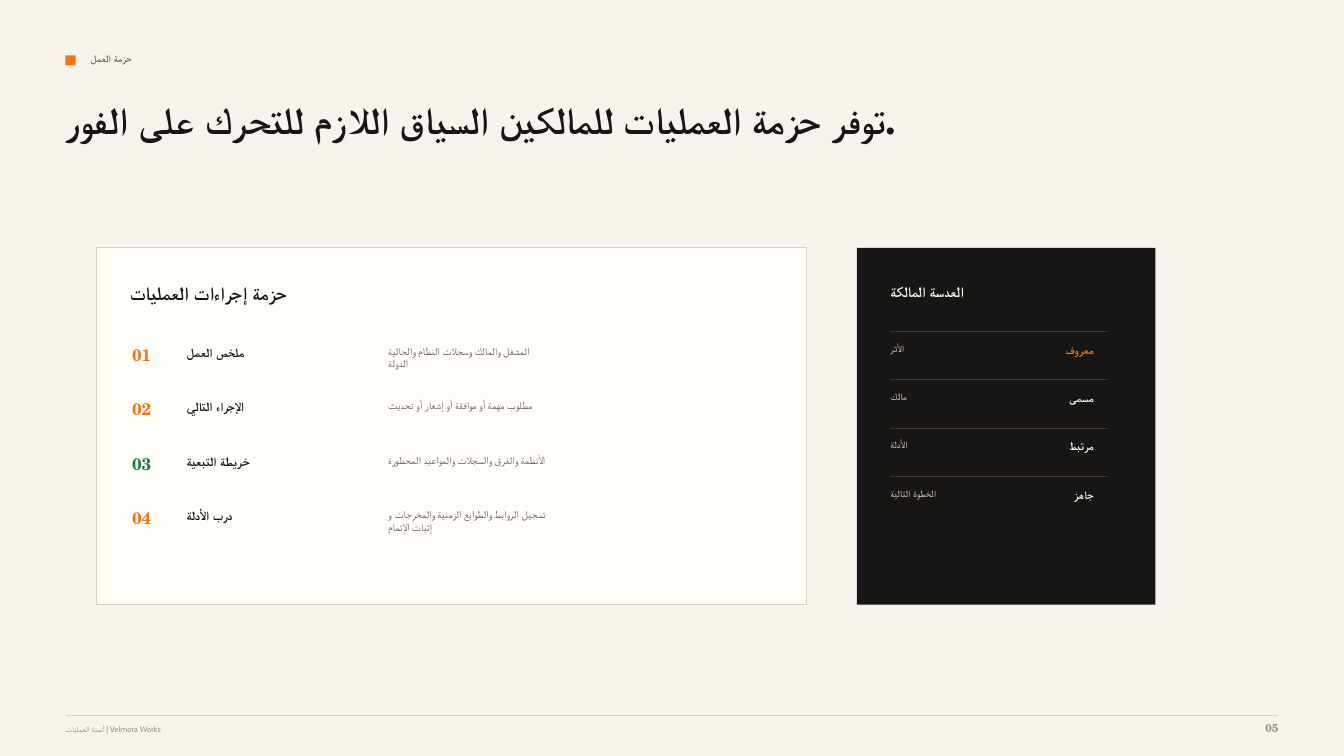
"""Build the work packet slide: a numbered actions card beside a dark owner lens."""
from dataclasses import dataclass

from lxml import etree
from pptx import Presentation
from pptx.dml.color import RGBColor
from pptx.enum.shapes import MSO_CONNECTOR, MSO_SHAPE
from pptx.enum.text import PP_ALIGN
from pptx.oxml.ns import qn
from pptx.util import Inches, Pt

RECTANGLE = MSO_SHAPE.RECTANGLE
STRAIGHT = MSO_CONNECTOR.STRAIGHT
LEFT, RIGHT = PP_ALIGN.LEFT, PP_ALIGN.RIGHT

SECTION = "حزمة العمل"
TITLE = "توفر حزمة العمليات للمالكين السياق اللازم للتحرك على الفور."
ACTIONS_TITLE = "حزمة إجراءات العمليات"
ACTIONS = [
    ("ملخص العمل", ["المشغل والمالك وسجلات النظام والحالية", "الدولة"], "orange"),
    ("الإجراء التالي", ["مطلوب مهمة أو موافقة أو إشعار أو تحديث"], "orange"),
    ("خريطة التبعية", ["الأنظمة والفرق والسجلات والمواعيد المحظورة"], "green"),
    ("درب الأدلة", ["تسجيل الروابط والطوابع الزمنية والمخرجات و", "إثبات الإتمام"], "orange"),
]
LENS_TITLE = "العدسة المالكة"
LENS = [
    ("الأثر", "معروف", "orange"),
    ("مالك", "مسمى", "paper"),
    ("الأدلة", "مرتبط", "paper"),
    ("الخطوة التالية", "جاهز", "paper"),
]
FOOTER = "أتمتة العمليات | Velmora Works"
PAGE = "05"


@dataclass(frozen=True)
class Style:
    size: float
    color: str
    bold: bool = True
    font: str = "Cabin"
    align: int = LEFT


class Theme:
    """Colours and text styles of the slide."""
    serif = "TeX Gyre Schola"
    colors = {
        "paper": "F7F4EE", "card": "FFFDF8", "ink": "171614", "orange": "F97316",
        "green": "15803D", "muted": "69635A", "border": "D9D0C3",
        "lens_rule": "3C362E", "lens_label": "AFA79B", "footer": "9A9184",
    }
    section = Style(7.1, "muted")
    title = Style(27, "ink", font=serif)
    card_title = Style(13.5, "ink")
    action = Style(9, "ink")
    detail = Style(7.5, "muted", bold=False)
    lens_title = Style(10.5, "paper")
    lens_label = Style(6.8, "lens_label")
    footer = Style(5.6, "footer", bold=False)
    page = Style(8.2, "footer", font=serif, align=RIGHT)

    @classmethod
    def number(cls, color):
        return Style(12, color, font=cls.serif)

    @classmethod
    def lens_value(cls, color):
        return Style(8.2, color, align=RIGHT)


WIDTH, HEIGHT = 13.33, 7.5
MARGIN = 0.65
CONTENT_WIDTH = WIDTH - 2 * MARGIN
PANEL_TOP, PANEL_HEIGHT = 2.46, 3.54
CARD_LEFT, CARD_WIDTH = 0.96, 7.04
LENS_LEFT, LENS_WIDTH = 8.5, 2.96
PANEL_PADDING = 0.33
ACTION_TOP, ACTION_PITCH = 3.42, 0.54
NUMBER_LEFT, ACTION_LEFT, DETAIL_LEFT = 1.31, 1.85, 3.85
LENS_TOP, LENS_PITCH, LENS_RULE_WIDTH = 3.29, 0.48, 2.15
FOOTER_TOP = 7.1


def color(name):
    return RGBColor.from_string(Theme.colors[name])


def add_box(slide, left, top, width, height, fill, border=None):
    shape = slide.shapes.add_shape(
        RECTANGLE, Inches(left), Inches(top), Inches(width), Inches(height))
    shape.shadow.inherit = False
    shape.fill.solid()
    shape.fill.fore_color.rgb = color(fill)
    if border:
        shape.line.color.rgb = color(border)
        shape.line.width = Pt(0.75)
    else:
        shape.line.fill.background()


def add_rule(slide, left, top, width, line_color):
    rule = slide.shapes.add_connector(
        STRAIGHT, Inches(left), Inches(top), Inches(left + width), Inches(top))
    rule.line.color.rgb = color(line_color)
    rule.line.width = Pt(0.75)
    etree.SubElement(rule._element.spPr, qn("a:effectLst"))


def add_text(slide, left, top, width, height, lines, style):
    box = slide.shapes.add_textbox(
        Inches(left), Inches(top), Inches(width), Inches(height))
    frame = box.text_frame
    frame.word_wrap = True
    frame.margin_left = frame.margin_right = frame.margin_top = frame.margin_bottom = 0
    frame.text = "\n".join(lines)
    for paragraph in frame.paragraphs:
        paragraph.alignment = style.align
        paragraph.font.name = style.font
        paragraph.font.size = Pt(style.size)
        paragraph.font.bold = style.bold
        paragraph.font.color.rgb = color(style.color)


def add_header(slide):
    add_box(slide, MARGIN, 0.55, 0.1, 0.1, "orange")
    add_text(slide, MARGIN + 0.25, 0.52, 6.46, 0.19, [SECTION], Theme.section)
    add_text(slide, MARGIN, 0.96, 9.38, 1.02, [TITLE], Theme.title)


def add_actions(slide):
    add_box(slide, CARD_LEFT, PANEL_TOP, CARD_WIDTH, PANEL_HEIGHT, "card", "border")
    add_text(slide, CARD_LEFT + PANEL_PADDING, PANEL_TOP + PANEL_PADDING, 3.12, 0.25,
             [ACTIONS_TITLE], Theme.card_title)
    for index, (action, details, accent) in enumerate(ACTIONS):
        top = ACTION_TOP + index * ACTION_PITCH
        add_text(slide, NUMBER_LEFT, top, 0.35, 0.25, [f"{index + 1:02d}"],
                 Theme.number(accent))
        add_text(slide, ACTION_LEFT, top, 1.81, 0.19, [action], Theme.action)
        add_text(slide, DETAIL_LEFT, top, 3.33, 0.31, details, Theme.detail)


def add_lens(slide):
    left = LENS_LEFT + PANEL_PADDING
    add_box(slide, LENS_LEFT, PANEL_TOP, LENS_WIDTH, PANEL_HEIGHT, "ink")
    add_text(slide, left, PANEL_TOP + 0.35, 1.67, 0.21, [LENS_TITLE], Theme.lens_title)
    for index, (label, value, accent) in enumerate(LENS):
        top = LENS_TOP + index * LENS_PITCH
        add_rule(slide, left, top, LENS_RULE_WIDTH, "lens_rule")
        add_text(slide, left, top + 0.11, 0.96, 0.17, [label], Theme.lens_label)
        add_text(slide, left + 1.17, top + 0.11, 0.85, 0.17, [value],
                 Theme.lens_value(accent))


def add_footer(slide):
    add_rule(slide, MARGIN, FOOTER_TOP, CONTENT_WIDTH, "border")
    add_text(slide, MARGIN, FOOTER_TOP + 0.09, 7.92, 0.15, [FOOTER], Theme.footer)
    add_text(slide, WIDTH - MARGIN - 0.5, FOOTER_TOP + 0.05, 0.5, 0.19, [PAGE], Theme.page)


def main():
    presentation = Presentation()
    presentation.slide_width = Inches(WIDTH)
    presentation.slide_height = Inches(HEIGHT)
    slide = presentation.slides.add_slide(presentation.slide_layouts[6])
    slide.background.fill.solid()
    slide.background.fill.fore_color.rgb = color("paper")
    add_header(slide)
    add_actions(slide)
    add_lens(slide)
    add_footer(slide)
    presentation.save("out.pptx")


if __name__ == "__main__":
    main()
